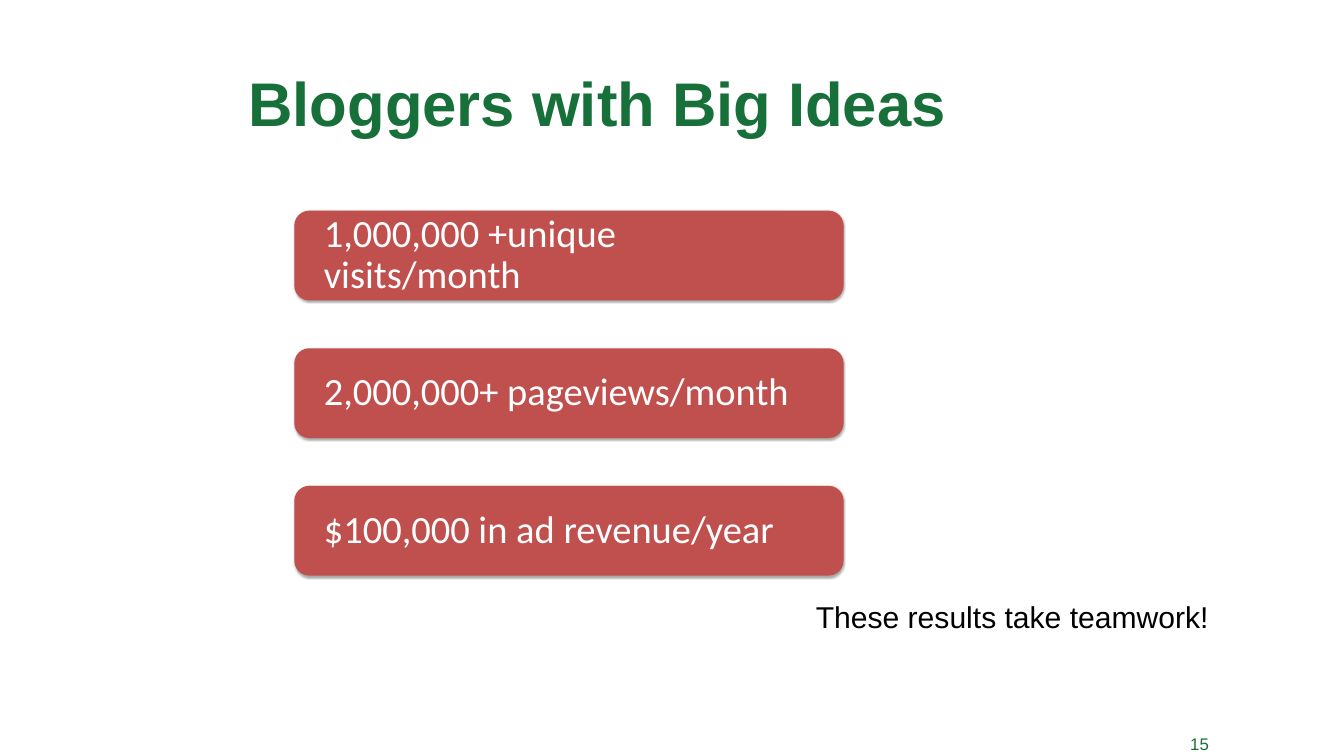
from lxml import etree
from pptx import Presentation
from pptx import util as u
from pptx.dml.color import RGBColor
from pptx.enum import shapes, text
from pptx.oxml import ns

GREEN, RED, WHITE, BLACK = "17703A", "C0504D", "FFFFFF", "000000"
LEFT, CENTER = text.PP_ALIGN.LEFT, text.PP_ALIGN.CENTER
TOP, MIDDLE = text.MSO_ANCHOR.TOP, text.MSO_ANCHOR.MIDDLE
SHADOW = dict(blurRad=u.Pt(3.1), dist=u.Pt(1.8), dir=90 * 60000, rotWithShape=0)


def rgb(value):
    return RGBColor.from_string(value)


class Deck:
    """Slide builder whose lengths are percentages of the slide's width and height."""

    def __init__(self, width, height):
        self.prs = Presentation()
        self.prs.slide_width, self.prs.slide_height = u.Inches(width), u.Inches(height)
        self.s = self.prs.slides.add_slide(self.prs.slide_layouts[6])

    def box(self, x, y, w, h):
        across, down = self.prs.slide_width / 100, self.prs.slide_height / 100
        return [round(v) for v in (x * across, y * down, w * across, h * down)]

    def fill_text(self, sp, words, size, color, font="Arial", bold=False, align=LEFT,
                  anchor=TOP, inset=(0.1, 0.05, 0.1, 0.05), spacing=1.0):
        tf = sp.text_frame
        sides = ("margin_left", "margin_top", "margin_right", "margin_bottom")
        frame = dict(zip(sides, map(u.Inches, inset)), word_wrap=True, vertical_anchor=anchor)
        p = tf.paragraphs[0]
        r = p.add_run()
        r.text = words
        for target, values in (
            (tf, frame),
            (p, dict(alignment=align, line_spacing=spacing)),
            (r.font, dict(name=font, size=u.Pt(size), bold=bold)),
        ):
            for name, value in values.items():
                setattr(target, name, value)
        r.font.color.rgb = rgb(color)

    def label(self, place, words, size, color, **style):
        sp = self.s.shapes.add_textbox(*self.box(*place))
        self.fill_text(sp, words, size, color, **style)

    def card(self, place, words, size, color, fill, **style):
        kind = shapes.MSO_SHAPE.ROUNDED_RECTANGLE
        sp = self.s.shapes.add_shape(kind, *self.box(*place))
        sp.fill.solid()
        sp.fill.fore_color.rgb = rgb(fill)
        sp.line.fill.background()
        self.shade(sp)
        self.fill_text(sp, words, size, color, **style)

    def shade(self, sp):
        sp.shadow.inherit = False
        effects = sp._element.spPr.find(ns.qn("a:effectLst"))
        values = {k: str(int(v)) for k, v in SHADOW.items()}
        shadow = etree.SubElement(effects, ns.qn("a:outerShdw"), values)
        tint = etree.SubElement(shadow, ns.qn("a:srgbClr"), val=BLACK)
        etree.SubElement(tint, ns.qn("a:alpha"), val="35000")


def main():
    deck = Deck(26.67, 15)
    deck.label((10.72, 6.93, 67.45, 13), "Bloggers with Big Ideas", 88, GREEN, bold=True,
               align=CENTER, anchor=MIDDLE, inset=(0.24, 0.12, 0.24, 0.12))
    results = ("1,000,000 +unique visits/month", "2,000,000+ pageviews/month",
               "$100,000 in ad revenue/year")
    for row, result in enumerate(results):
        deck.card((21.9, 27.87 + 18.2 * row, 40.87, 11.87), result, 55, WHITE, RED,
                  font="Calibri", anchor=MIDDLE, inset=(0.5, 0, 0.4, 0), spacing=0.9)
    deck.label((60.33, 78.87, 33.07, 5.47), "These results take teamwork!", 43, BLACK)
    deck.label((86.61, 96.73, 5.29, 5.33), "15", 24, GREEN, align=CENTER)
    deck.prs.save("out.pptx")


if __name__ == "__main__":
    main()
